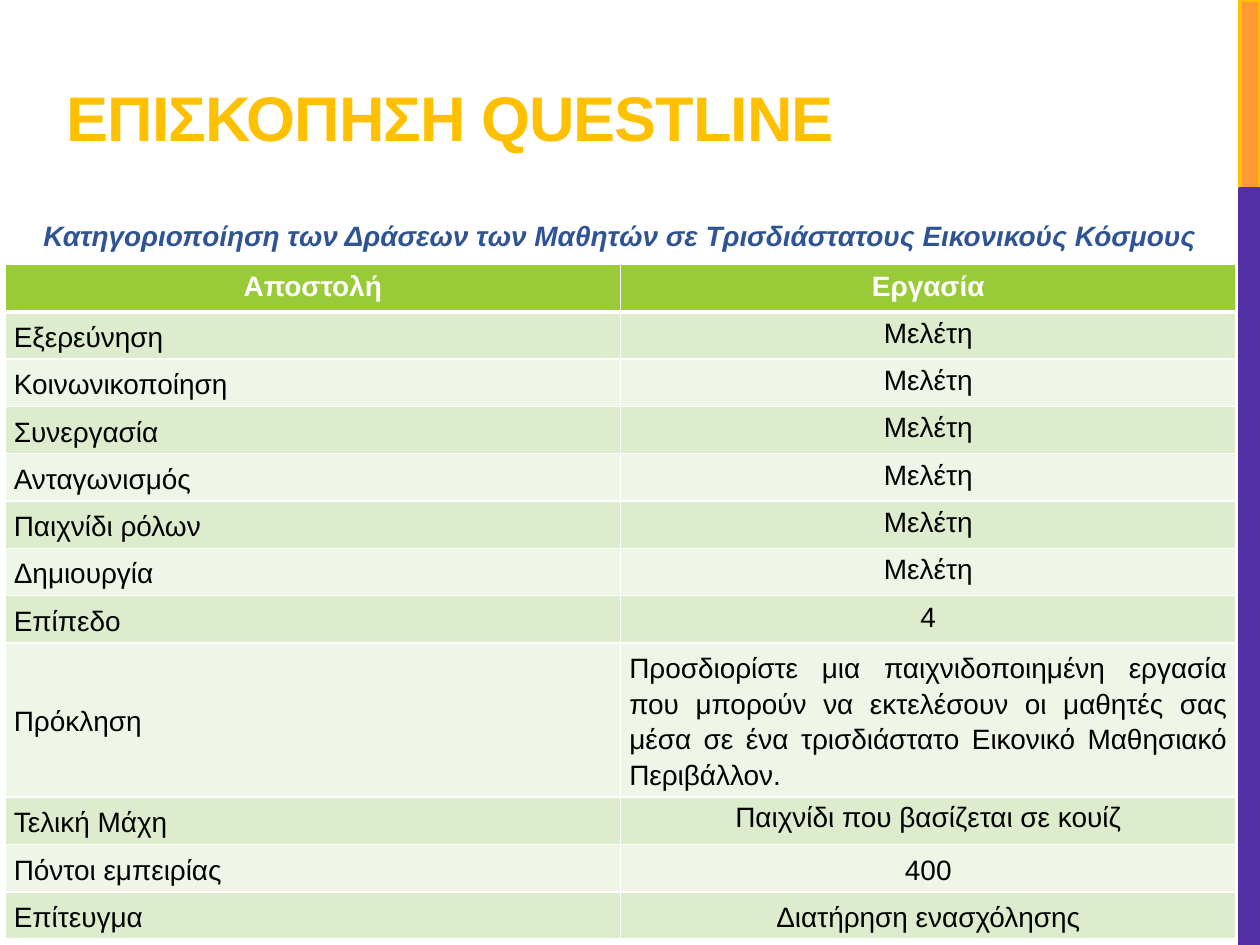
from lxml import etree
from pptx import Presentation
from pptx.dml.color import RGBColor
from pptx.enum.shapes import MSO_SHAPE
from pptx.enum.text import MSO_ANCHOR, PP_ALIGN
from pptx.oxml.ns import qn
from pptx.util import Inches, Pt

RECT = MSO_SHAPE.RECTANGLE
TOP, MIDDLE, BOTTOM = MSO_ANCHOR.TOP, MSO_ANCHOR.MIDDLE, MSO_ANCHOR.BOTTOM
LEFT, CENTER, JUSTIFY = PP_ALIGN.LEFT, PP_ALIGN.CENTER, PP_ALIGN.JUSTIFY

WHITE = RGBColor(0xFF, 0xFF, 0xFF)
BLACK = RGBColor(0x00, 0x00, 0x00)
GOLD = RGBColor(0xFF, 0xC0, 0x00)
ORANGE = RGBColor(0xFF, 0x99, 0x33)
PURPLE = RGBColor(0x53, 0x30, 0xA5)
BLUE = RGBColor(0x2F, 0x54, 0x96)
GREEN = RGBColor(0x99, 0xCB, 0x38)
BANDS = (RGBColor(0xDE, 0xEC, 0xCE), RGBColor(0xEF, 0xF6, 0xE8))

TABLE_HEIGHT, CHALLENGE_HEIGHT, CHALLENGE_ROW = 5.35, 1.22, 8
HEADER = ("Αποστολή", "Εργασία")
MISSIONS = (
    ("Εξερεύνηση", "Μελέτη"),
    ("Κοινωνικοποίηση", "Μελέτη"),
    ("Συνεργασία", "Μελέτη"),
    ("Ανταγωνισμός", "Μελέτη"),
    ("Παιχνίδι ρόλων", "Μελέτη"),
    ("Δημιουργία", "Μελέτη"),
    ("Επίπεδο", "4"),
    ("Πρόκληση", "Προσδιορίστε μια παιχνιδοποιημένη εργασία που μπορούν "
     "να εκτελέσουν οι μαθητές σας μέσα σε ένα τρισδιάστατο Εικονικό "
     "Μαθησιακό Περιβάλλον."),
    ("Τελική Μάχη", "Παιχνίδι που βασίζεται σε κουίζ"),
    ("Πόντοι εμπειρίας", "400"),
    ("Επίτευγμα", "Διατήρηση ενασχόλησης"),
)


class SlideBuilder:
    font = "Arial"
    size = 16

    def __init__(self, prs):
        self.slide = prs.slides.add_slide(prs.slide_layouts[5])

    def add_text(self, tf, text, color, size=None, align=LEFT, bold=False, italic=False):
        p = tf.paragraphs[0]
        p.alignment = align
        r = p.add_run()
        r.text = text
        r.font.name = self.font
        r.font.size = Pt(size or self.size)
        r.font.bold = bold
        r.font.italic = italic
        r.font.color.rgb = color
        return p

    def bar(self, top, height, fill, line):
        sp = self.slide.shapes.add_shape(
            RECT, Inches(9.84), Inches(top), Inches(0.16), Inches(height))
        sp.shadow.inherit = False
        sp.fill.solid()
        sp.fill.fore_color.rgb = fill
        sp.line.color.rgb = line
        sp.line.width = Pt(2.25)

    def title(self, text):
        sp = self.slide.shapes.title
        sp.left, sp.top = Inches(0.43), Inches(0.44)
        sp.width, sp.height = Inches(6.55), Inches(0.83)
        tf = sp.text_frame
        tf.vertical_anchor = BOTTOM
        p = self.add_text(tf, text, GOLD, size=36, bold=True)
        p.runs[0]._r.get_or_add_rPr().set("spc", "-60")

    def subtitle(self, text):
        sp = self.slide.shapes.add_textbox(
            Inches(0.17), Inches(1.55), Inches(9.5), Inches(0.45))
        tf = sp.text_frame
        tf.word_wrap = True
        p = self.add_text(tf, text, BLUE, align=CENTER, bold=True, italic=True)
        p.line_spacing = 1.5
        p.space_after = Pt(6)

    def border(self, cell, top, bottom):
        tcPr = cell._tc.get_or_add_tcPr()
        for side, width in (("L", 1), ("R", 1), ("T", top), ("B", bottom)):
            ln = etree.SubElement(tcPr, qn(f"a:ln{side}"), w=str(Pt(width)))
            fill = etree.SubElement(ln, qn("a:solidFill"))
            etree.SubElement(fill, qn("a:srgbClr"), val=str(WHITE))

    def cell(self, cell, text, fill, color=BLACK, align=LEFT, anchor=TOP,
             bold=False, spaced=False, top=1, bottom=1):
        self.border(cell, top, bottom)
        cell.fill.solid()
        cell.fill.fore_color.rgb = fill
        cell.vertical_anchor = anchor
        p = self.add_text(cell.text_frame, text, color, align=align, bold=bold)
        if spaced:
            cell.margin_left = cell.margin_right = Inches(0.07)
            cell.margin_top = cell.margin_bottom = 0
            p.line_spacing = 1.15
            p.space_after = Pt(3)

    def table(self, header, rows):
        table = self.slide.shapes.add_table(
            len(rows) + 1, len(header), Inches(0.04), Inches(2.1),
            Inches(9.77), Inches(TABLE_HEIGHT)).table
        for i, row in enumerate(table.rows):
            row.height = Inches(CHALLENGE_HEIGHT if i == CHALLENGE_ROW else
                                (TABLE_HEIGHT - CHALLENGE_HEIGHT) / len(rows))
        for c, text in enumerate(header):
            self.cell(table.cell(0, c), text, GREEN, WHITE, CENTER,
                      bold=True, bottom=3)
        for i, (mission, task) in enumerate(rows, 1):
            fill = BANDS[(i - 1) % 2]
            top = 3 if i == 1 else 1
            self.cell(table.cell(i, 0), mission, fill, anchor=MIDDLE,
                      align=JUSTIFY if i < CHALLENGE_ROW else LEFT,
                      spaced=True, top=top)
            self.cell(table.cell(i, 1), task, fill,
                      align=JUSTIFY if i == CHALLENGE_ROW else CENTER,
                      anchor=TOP if i < CHALLENGE_ROW or i == CHALLENGE_ROW + 1 else MIDDLE,
                      spaced=i >= CHALLENGE_ROW, top=top)


def main():
    prs = Presentation()
    prs.slide_width, prs.slide_height = Inches(10), Inches(7.5)
    s = SlideBuilder(prs)
    s.bar(0, 1.5, ORANGE, GOLD)
    s.bar(1.5, 6, PURPLE, PURPLE)
    s.title("ΕΠΙΣΚΟΠΗΣΗ QUESTLINΕ")
    s.subtitle("Κατηγοριοποίηση των Δράσεων των Μαθητών "
               "σε Τρισδιάστατους Εικονικούς Κόσμους")
    s.table(HEADER, MISSIONS)
    prs.save("out.pptx")


if __name__ == "__main__":
    main()
